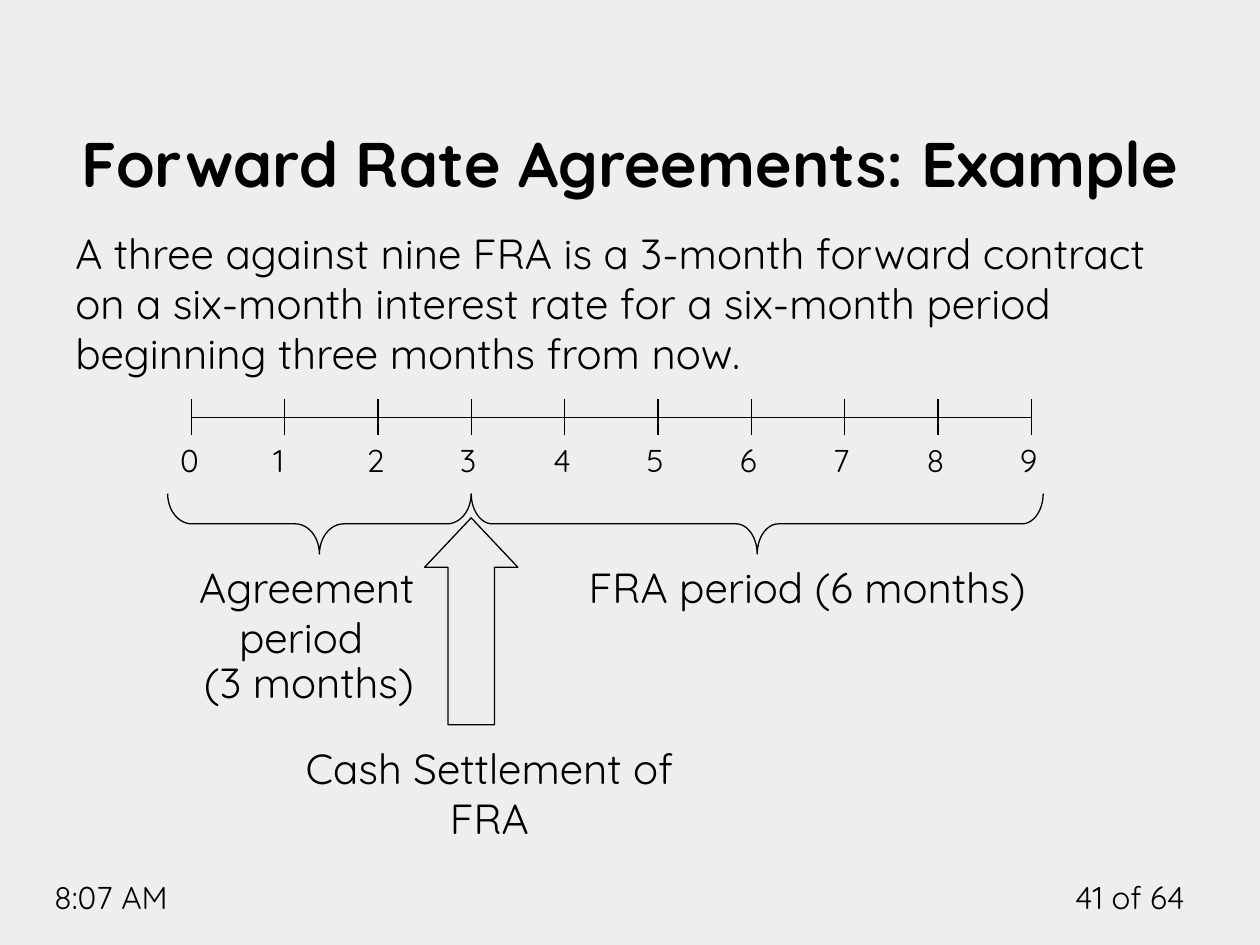
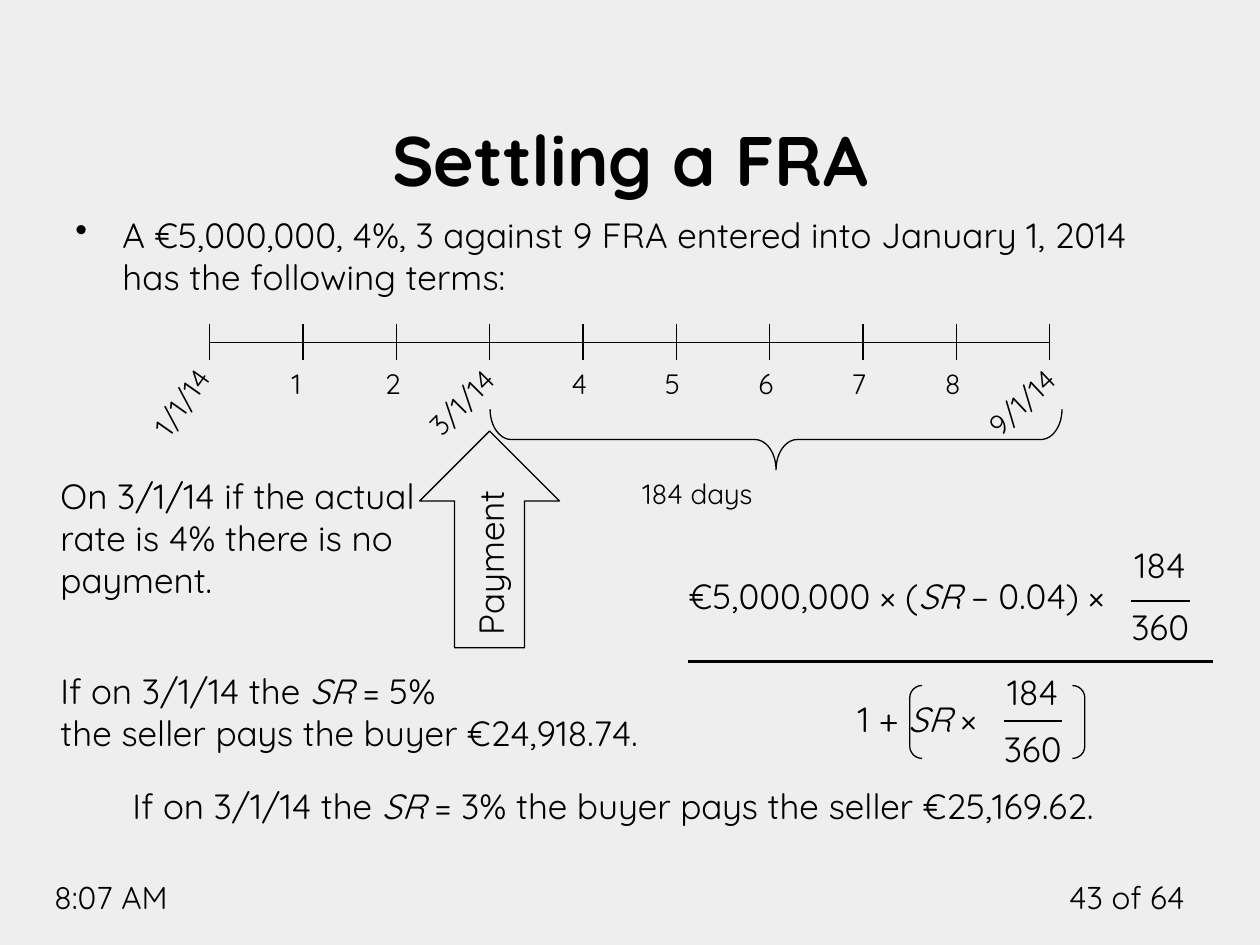
from lxml.etree import SubElement
from pptx import Presentation
from pptx.dml.color import RGBColor
from pptx.enum.shapes import MSO_CONNECTOR, MSO_SHAPE
from pptx.enum.text import MSO_ANCHOR, PP_ALIGN
from pptx.oxml.ns import qn
from pptx.util import Cm, Pt

INK = RGBColor(0, 0, 0)
PAPER = RGBColor(0xEE, 0xEE, 0xEE)
FONT = "Quicksand"
STEP = 16.93 / 9
TICK = 0.36
MID, RIGHT = PP_ALIGN.CENTER, PP_ALIGN.RIGHT
WIDE = (0.28, 0.15)


def text(slide, at, *lines, size=20, bold=False, align=PP_ALIGN.LEFT,
         anchor=MSO_ANCHOR.TOP, turn=0, pad=(0.25, 0.13), bullet=False):
    """Add a text box with one paragraph per line; *stars* mark italics."""
    box = slide.shapes.add_textbox(*map(Cm, at))
    box.rotation = turn
    frame = box.text_frame
    frame.word_wrap = True
    frame.vertical_anchor = anchor
    frame.margin_left = frame.margin_right = Cm(pad[0])
    frame.margin_top = frame.margin_bottom = Cm(pad[1])
    for row, line in enumerate(lines):
        para = frame.add_paragraph() if row else frame.paragraphs[0]
        para.alignment = align
        if bullet:
            hang(para)
        for spot, part in enumerate(line.split("*")):
            run = para.add_run()
            run.text = part
            font = run.font
            font.name, font.size, font.bold = FONT, Pt(size), bold
            font.italic = spot % 2 == 1
            font.color.rgb = INK


def hang(para):
    """Give a paragraph a bullet and a hanging indent."""
    props = para._p.get_or_add_pPr()
    props.set("marL", str(Cm(0.95)))
    props.set("indent", str(-Cm(0.95)))
    SubElement(props, qn("a:buChar")).set("char", "•")


def line(slide, x1, y1, x2, y2, width=0.75):
    """Draw a straight line."""
    link = slide.shapes.add_connector(
        MSO_CONNECTOR.STRAIGHT, Cm(x1), Cm(y1), Cm(x2), Cm(y2))
    link.line.color.rgb = INK
    link.line.width = Pt(width)
    SubElement(link._element.spPr, qn("a:effectLst"))


def shape(slide, kind, at, *bends, turn=0):
    """Draw an unfilled outline shape."""
    form = slide.shapes.add_shape(kind, *map(Cm, at))
    form.shadow.inherit = False
    form.fill.background()
    form.line.color.rgb = INK
    form.line.width = Pt(0.75)
    form.rotation = turn
    for spot, bend in enumerate(bends):
        form.adjustments[spot] = bend


def brace(slide, left, right, top, curve):
    """Draw a brace that lies under a span and points down."""
    deep, span = 1.22, right - left
    at = ((left + right - deep) / 2, top + (deep - span) / 2, deep, span)
    shape(slide, MSO_SHAPE.LEFT_BRACE, at, curve, 0.5, turn=270)


def scale(slide, left, y, size, dates):
    """Draw the nine-month time line; dates maps months to slanted labels."""
    line(slide, left, y, left + 9 * STEP, y)
    for month in range(10):
        x = left + month * STEP
        line(slide, x, y - TICK, x, y + TICK)
        if month in dates:
            label, turn = dates[month]
            text(slide, (x - 2.32, y + 0.74, 3.5, 0.94), label,
                 size=size, align=MID, turn=turn)
        else:
            text(slide, (x - 0.48, y + TICK, 1.17, 1.02), str(month), size=size)


def ratio(slide, mid, bar, top, low):
    """Write 184 over 360 around a fraction bar."""
    for y, label in ((top, "184"), (low, "360")):
        text(slide, (mid - 1.3, y, 2.6, 1.12), label, align=MID)
    line(slide, mid - 0.59, bar, mid + 0.59, bar, 1)


def page(deck, title, size, number):
    """Add a slide with its title and footers."""
    slide = deck.slides.add_slide(deck.slide_layouts[6])
    text(slide, (21.16, 17.58, 2.97, 1.02), f"{number} of 64", size=18, align=RIGHT)
    text(slide, (0.84, 17.58, 4.01, 1.02), "8:07 AM", size=18)
    text(slide, (1.27, 0.99, 22.86, 3.18), title, size=size, bold=True,
         align=MID, anchor=MSO_ANCHOR.BOTTOM)
    return slide


def sample(deck):
    """Build the slide that explains a three against nine FRA."""
    slide = page(deck, "Forward Rate Agreements: Example", 36, 41)
    text(slide, (1.27, 4.45, 22.86, 12.57),
         "A three against nine FRA is a 3-month forward contract on a six-month "
         "interest rate for a six-month period beginning three months from now.",
         size=24)
    scale(slide, 3.86, 8.41, 18, {})
    brace(slide, 9.5, 21.03, 9.95, 0.35)
    text(slide, (11.05, 11.18, 10.44, 1.3), "FRA period (6 months)",
         size=24, align=MID)
    shape(slide, MSO_SHAPE.UP_ARROW, (8.56, 10.44, 1.88, 4.17), 0.5, 0.53)
    text(slide, (5.51, 14.83, 8.71, 2.31), "Cash Settlement of FRA",
         size=24, align=MID)
    brace(slide, 3.38, 9.5, 9.95, 0.4)
    text(slide, (3.38, 11.18, 5.61, 2.31), "Agreement period ",
         size=24, align=MID)
    text(slide, (3.86, 13.11, 5.33, 1.27), "(3 months)", size=24)


def settle(deck):
    """Build the slide that works out the settlement."""
    slide = page(deck, "Settling a FRA", 40, 43)
    text(slide, (1.27, 4.17, 22.86, 12.78),
         "A €5,000,000, 4%, 3 against 9 FRA entered into January 1, 2014 "
         "has the following terms:", bullet=True)
    scale(slide, 4.23, 6.9, 16, {
        0: ("1/1/14", 305.2), 3: ("3/1/14", 314.7), 9: ("9/1/14", 316.7)})
    brace(slide, 9.88, 21.41, 8.25, 0.35)
    text(slide, (12.7, 9.47, 5.87, 0.94), "184 days", size=16)

    text(slide, (13.64, 11.46, 9.4, 1.12), "€5,000,000 × (*SR *– 0.04) ×")
    ratio(slide, 23.39, 12.12, 10.82, 12.07)
    line(slide, 13.87, 13.34, 24.46, 13.34, 1.5)
    text(slide, (17.04, 13.94, 4.24, 1.12), "1 + *SR* ×")
    shape(slide, MSO_SHAPE.DOUBLE_BRACKET, (18.34, 13.82, 3.53, 1.47), 0.17)
    ratio(slide, 20.82, 14.53, 13.39, 14.53)

    text(slide, (0.94, 9.42, 7.75, 2.84),
         "On 3/1/14 if the actual rate is 4% there is no payment.", pad=WIDE)
    text(slide, (0.94, 13.34, 13.41, 2.01), "If on 3/1/14 the *SR* = 5%",
         "the seller pays the buyer €24,918.74.", pad=WIDE)
    text(slide, (2.39, 15.67, 21.08, 1.14),
         "If on 3/1/14 the *SR* = 3% the buyer pays the seller €25,169.62.",
         pad=WIDE)
    shape(slide, MSO_SHAPE.UP_ARROW, (8.46, 8.69, 2.82, 4.37), 0.5, 0.5)
    text(slide, (8.08, 10.69, 3.61, 1.12), "Payment", turn=270)


def main():
    """Build and save the deck."""
    deck = Presentation()
    deck.slide_width, deck.slide_height = Cm(25.4), Cm(19.05)
    fill = deck.slide_master.background.fill
    fill.solid()
    fill.fore_color.rgb = PAPER
    sample(deck)
    settle(deck)
    deck.save("out.pptx")


if __name__ == "__main__":
    main()
